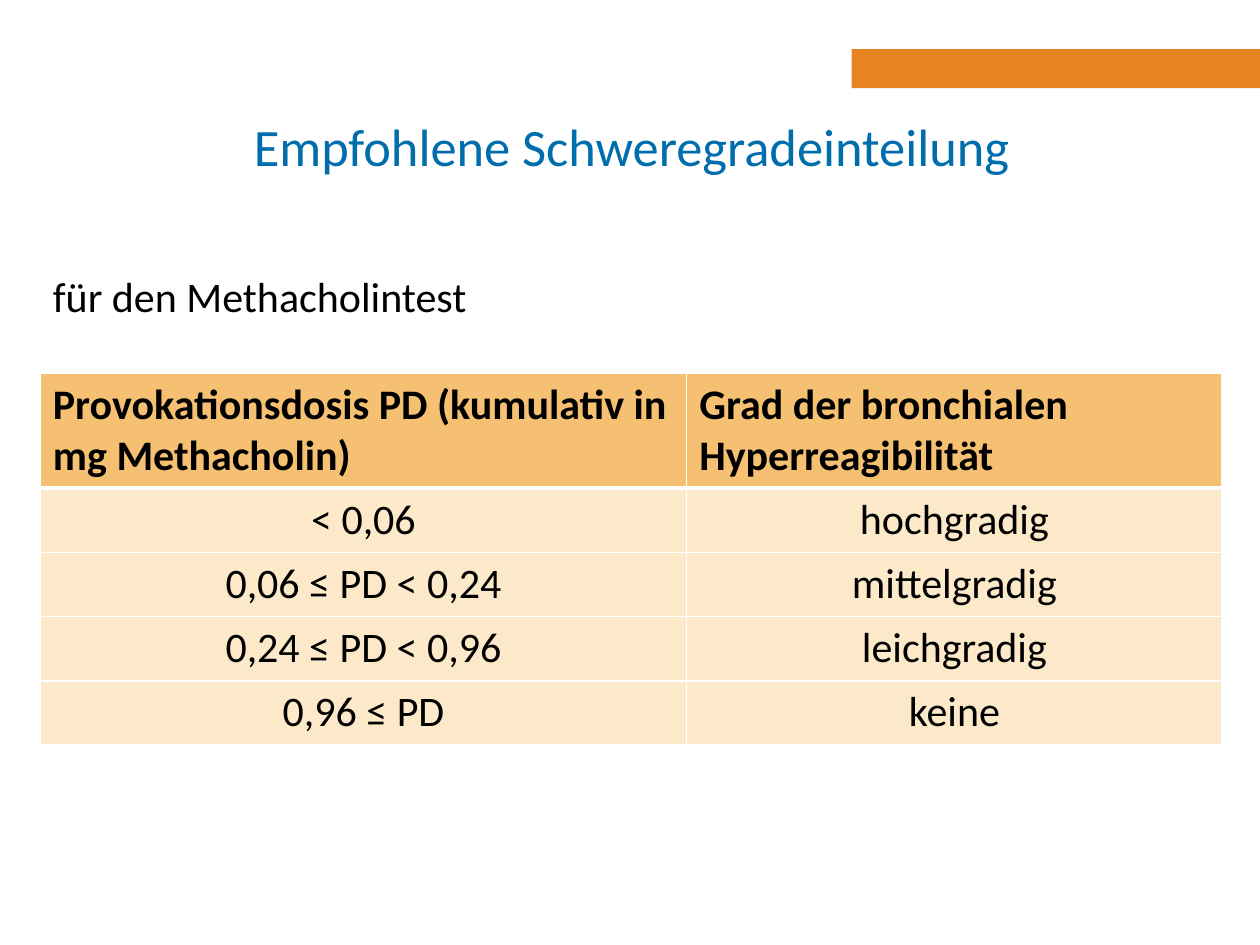
from lxml.etree import SubElement
from pptx import Presentation
from pptx.dml.color import RGBColor
from pptx.enum.shapes import MSO_SHAPE as Shape
from pptx.enum.text import MSO_ANCHOR as Anchor, MSO_AUTO_SIZE as AutoSize, PP_ALIGN as Align
from pptx.oxml.ns import qn
from pptx.util import Inches, Pt

TITLE = "Empfohlene Schweregradeinteilung"
SUBTITLE = "für den Methacholintest"
ROWS = [
    ("Provokationsdosis PD (kumulativ in mg Methacholin)", "Grad der bronchialen\nHyperreagibilität"),
    ("< 0,06", "hochgradig"),
    ("0,06 ≤ PD < 0,24", "mittelgradig"),
    ("0,24 ≤ PD < 0,96", "leichgradig"),
    ("0,96 ≤ PD", "keine"),
]
COLUMN_WIDTHS = (5.13, 4.25)
HEADER_HEIGHT, ROW_HEIGHT = 0.91, 0.51
LEFT, TABLE_TOP = 0.32, 2.96
WIDTH, HEIGHT = 10, 7.5
FONT = "Calibri"
ORANGE, BLUE, BLACK, WHITE = "E68323", "006EAC", "000000", "FFFFFF"
HEADER_FILL, BODY_FILL = "F5C071", "FBE9C9"


def paint(fill, color):
    """Give a fill one solid colour."""
    fill.solid()
    fill.fore_color.rgb = RGBColor.from_string(color)


def write(frame, text, size, color=BLACK, align=Align.LEFT, bold=False):
    """Set the text of a frame and format all its runs."""
    frame.text = text
    for para in frame.paragraphs:
        para.alignment = align
        for span in para.runs:
            span.font.name, span.font.size, span.font.bold = FONT, Pt(size), bold
            span.font.color.rgb = RGBColor.from_string(color)


def place(box, left, top, width, height, anchor):
    """Move a placeholder and fix how its text sits."""
    box.left, box.top, box.width, box.height = map(Inches, (left, top, width, height))
    box.text_frame.auto_size = AutoSize.NONE
    box.text_frame.word_wrap = True
    box.text_frame.vertical_anchor = anchor


def add_borders(cell, widths):
    """Draw white lines on the sides of a cell, widths in points."""
    properties = cell._tc.get_or_add_tcPr()
    for side, width in widths.items():
        line = SubElement(properties, qn(f"a:ln{side}"), w=str(Pt(width)))
        SubElement(SubElement(line, qn("a:solidFill")), qn("a:srgbClr"), val=WHITE)


def add_grades(page):
    """Add the table of severity grades."""
    heights = [HEADER_HEIGHT] + [ROW_HEIGHT] * (len(ROWS) - 1)
    table = page.shapes.add_table(
        len(ROWS), len(COLUMN_WIDTHS), Inches(LEFT), Inches(TABLE_TOP),
        Inches(sum(COLUMN_WIDTHS)), Inches(sum(heights))).table
    table.horz_banding = False
    for column, width in zip(table.columns, COLUMN_WIDTHS):
        column.width = Inches(width)
    for r, (texts, height) in enumerate(zip(ROWS, heights)):
        table.rows[r].height = Inches(height)
        header = r == 0
        for c, text in enumerate(texts):
            cell = table.cell(r, c)
            add_borders(cell, {"L": 1, "R": 1, "T": 3 if r == 1 else 1, "B": 3 if header else 1})
            paint(cell.fill, HEADER_FILL if header else BODY_FILL)
            write(cell.text_frame, text, 24, align=Align.LEFT if header else Align.CENTER, bold=header)


def main():
    """Build the slide and save it."""
    deck = Presentation()
    deck.slide_width, deck.slide_height = Inches(WIDTH), Inches(HEIGHT)
    page = deck.slides.add_slide(deck.slide_layouts[1])

    title, body = page.shapes.title, page.placeholders[1]
    place(title, 1.48, 0.69, 7.07, 0.93, Anchor.MIDDLE)
    write(title.text_frame, TITLE, 30, BLUE, Align.CENTER)
    place(body, LEFT, 2.1, 3.63, 0.71, Anchor.TOP)
    write(body.text_frame, SUBTITLE, 24)
    para = body.text_frame.paragraphs[0]
    para.space_before = Pt(0)
    properties = para._p.get_or_add_pPr()
    properties.set("marL", "0")
    properties.set("indent", "0")
    SubElement(properties, qn("a:buNone"))

    bar = page.shapes.add_shape(
        Shape.RECTANGLE, Inches(6.76), Inches(0.39), Inches(WIDTH - 6.76), Inches(0.31))
    bar.shadow.inherit = False
    paint(bar.fill, ORANGE)
    bar.line.fill.background()
    add_grades(page)
    deck.save("out.pptx")


if __name__ == "__main__":
    main()
